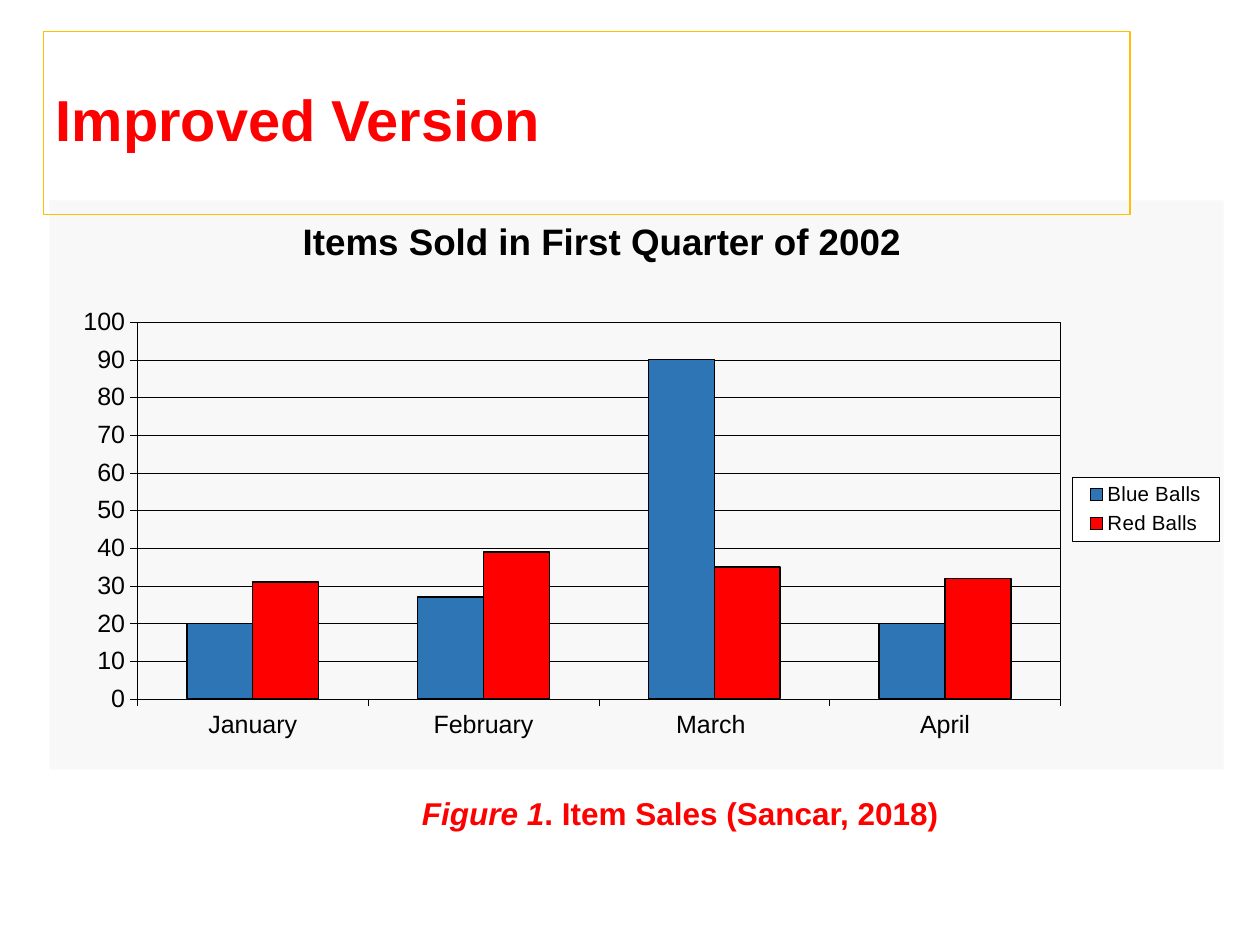
from typing import NamedTuple

from lxml.etree import fromstring
from pptx import Presentation
from pptx.chart.data import CategoryChartData
from pptx.dml.color import RGBColor
from pptx.enum.chart import XL_CHART_TYPE, XL_LEGEND_POSITION, XL_TICK_MARK
from pptx.enum.shapes import MSO_SHAPE
from pptx.enum.text import MSO_ANCHOR, MSO_AUTO_SIZE, PP_ALIGN
from pptx.oxml.ns import qn
from pptx.util import Inches, Pt

WIDE, HIGH = Inches(10), Inches(7.5)
FACE = "Arial"
RED, BLUE, GOLD = "FF0000", "2E75B6", "FFC000"
BLACK, WHITE, PALE = "000000", "FFFFFF", "F8F8F8"
NAMES = {
    "c": "http://schemas.openxmlformats.org/drawingml/2006/chart",
    "a": "http://schemas.openxmlformats.org/drawingml/2006/main",
}
SPACES = " ".join(f'xmlns:{key}="{uri}"' for key, uri in NAMES.items())


class Box(NamedTuple):
    """Left, top, width and height as percent of the whole."""
    left: float
    top: float
    wide: float
    high: float

    def place(self) -> tuple[int, ...]:
        return tuple(int(part * side / 100)
                     for part, side in zip(self, (WIDE, HIGH, WIDE, HIGH)))


class Series(NamedTuple):
    name: str
    color: str
    values: tuple[int, ...]


class Run(NamedTuple):
    text: str
    size: float
    italic: bool = False


TITLE = Box(3.45, 3.35, 86.25, 19.33)
CHART = Box(3.92, 21.2, 93.2, 60.23)
CAPTION = Box(32.5, 83.33, 59.2, 5.33)

MONTHS = ("January", "February", "March ", "April")
SALES = (
    Series("Blue Balls", BLUE, (20, 27, 90, 20)),
    Series("Red Balls", RED, (31, 39, 35, 32)),
)


def paint(color: str) -> RGBColor:
    return RGBColor.from_string(color)


def style(font, size: float, color: str = BLACK, bold: bool = False,
          italic: bool = False) -> None:
    look = {"name": FACE, "size": Pt(size), "bold": bold, "italic": italic}
    for key, value in look.items():
        setattr(font, key, value)
    font.color.rgb = paint(color)


def stroke(line, color: str, width: float) -> None:
    line.color.rgb = paint(color)
    line.width = Pt(width)


def write(frame, runs: tuple[Run, ...]) -> None:
    line = frame.paragraphs[0]
    line.alignment = PP_ALIGN.LEFT
    for item in runs:
        run = line.add_run()
        run.text = item.text
        style(run.font, item.size, RED, True, item.italic)


def lay(node, spot: int, inner: bool = False, **sides: float) -> None:
    """Give a chart part a manual layout as the child at index spot."""
    for old in node.findall(qn("c:layout")):
        node.remove(old)
    aim = '<c:layoutTarget val="inner"/>' if inner else ""
    modes = "".join(f'<c:{key}Mode val="edge"/>' for key in "xy")
    marks = "".join(f'<c:{key} val="{value}"/>' for key, value in sides.items())
    node.insert(spot, fromstring(
        f"<c:layout {SPACES}><c:manualLayout>{aim}{modes}{marks}"
        "</c:manualLayout></c:layout>"))


def dress(node, fill: str = "", line: str = "") -> None:
    """Set fill and line of a chart part; an empty colour means none."""
    def ink(color: str) -> str:
        return (f'<a:solidFill><a:srgbClr val="{color}"/></a:solidFill>'
                if color else "<a:noFill/>")

    part = fromstring(f'<c:spPr {SPACES}>{ink(fill)}'
                      f'<a:ln w="2540">{ink(line)}</a:ln></c:spPr>')
    text = node.find(qn("c:txPr"))
    if text is None:
        node.append(part)
    else:
        text.addprevious(part)


def draw_axes(chart) -> None:
    for axis in (chart.category_axis, chart.value_axis):
        axis.major_tick_mark = XL_TICK_MARK.OUTSIDE
        axis.minor_tick_mark = XL_TICK_MARK.NONE
        style(axis.tick_labels.font, 14.3)
        stroke(axis.format.line, BLACK, 0.2)
    scale = {"minimum_scale": 0, "maximum_scale": 100, "major_unit": 10,
             "has_major_gridlines": True}
    for key, value in scale.items():
        setattr(chart.value_axis, key, value)
    stroke(chart.value_axis.major_gridlines.format.line, BLACK, 0.2)


def draw_chart(slide) -> None:
    data = CategoryChartData()
    data.categories = MONTHS
    for item in SALES:
        data.add_series(item.name, item.values)
    chart = slide.shapes.add_chart(
        XL_CHART_TYPE.COLUMN_CLUSTERED, *CHART.place(), data).chart
    style(chart.font, 7.2)

    chart.has_title = True
    head = chart.chart_title.text_frame
    head.text = "Items Sold in First Quarter of 2002"
    style(head.paragraphs[0].runs[0].font, 21, bold=True)

    plot = chart.plots[0]
    plot.gap_width, plot.overlap = 150, 0
    plot.vary_by_categories = False
    for bars, item in zip(plot.series, SALES):
        bars.format.fill.solid()
        bars.format.fill.fore_color.rgb = paint(item.color)
        stroke(bars.format.line, BLACK, 0.8)
    draw_axes(chart)

    chart.has_legend = True
    legend = chart.legend
    legend.position = XL_LEGEND_POSITION.RIGHT
    legend.include_in_layout = False
    style(legend.font, 11.7)

    root = chart.element
    title, area, key = (root.find(f".//c:{tag}", NAMES)
                        for tag in ("title", "plotArea", "legend"))
    lay(title, 1, x=0.21, y=0.02)
    lay(area, 0, True, x=0.075, y=0.214, w=0.786, h=0.662)
    lay(key, 1, x=0.871, y=0.486, w=0.125, h=0.113)
    dress(area, line=BLACK)
    dress(key, WHITE, BLACK)
    dress(root, PALE)


def draw_caption(slide) -> None:
    frame = slide.shapes.add_textbox(*CAPTION.place()).text_frame
    frame.word_wrap = True
    frame.auto_size = MSO_AUTO_SIZE.SHAPE_TO_FIT_TEXT
    write(frame, (Run("Figure 1", 18, True),
                  Run(". Item Sales (Sancar, 2018)", 18)))


def draw_title(slide) -> None:
    box = slide.shapes.add_shape(MSO_SHAPE.RECTANGLE, *TITLE.place())
    box.shadow.inherit = False
    box.fill.background()
    stroke(box.line, GOLD, 0.75)
    box.text_frame.word_wrap = True
    box.text_frame.vertical_anchor = MSO_ANCHOR.MIDDLE
    write(box.text_frame, (Run("Improved Version", 33),))
    box.text_frame.paragraphs[0].line_spacing = 0.9


def main() -> None:
    deck = Presentation()
    deck.slide_width, deck.slide_height = WIDE, HIGH
    slide = deck.slides.add_slide(deck.slide_layouts[6])
    for draw in (draw_chart, draw_caption, draw_title):
        draw(slide)
    deck.save("out.pptx")


if __name__ == "__main__":
    main()
